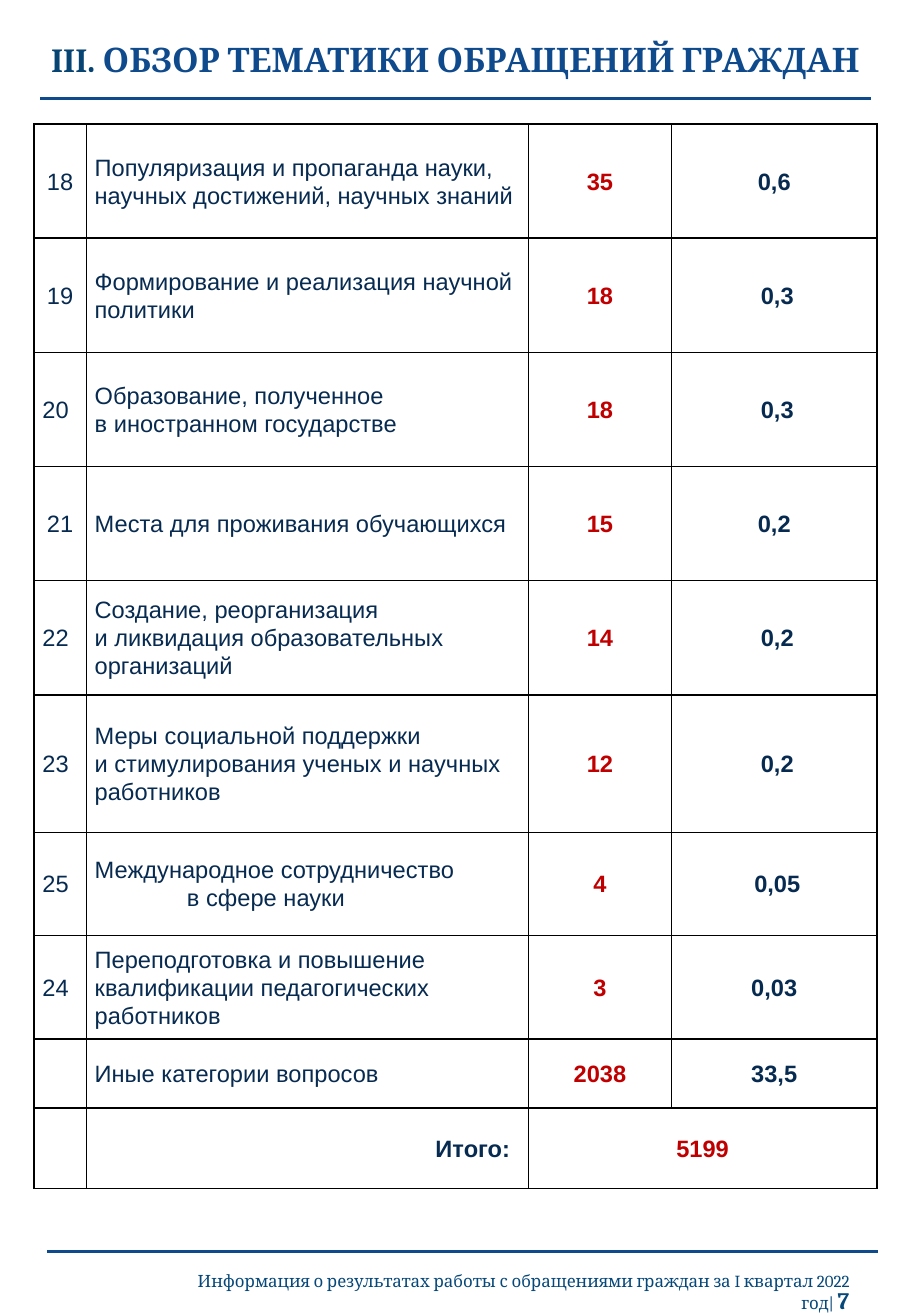
from lxml import etree
from pptx import Presentation
from pptx import util as u
from pptx.dml.color import RGBColor
from pptx.enum import shapes, text
from pptx.oxml import ns

Inches, Pt = u.Inches, u.Pt
LEFT, CENTER, RIGHT = text.PP_ALIGN.LEFT, text.PP_ALIGN.CENTER, text.PP_ALIGN.RIGHT
COLORS = {"title": "0E4A8C", "numeral": "064473", "footer": "064879",
          "body": "072A50", "count": "C00000", "border": "000000"}


def style(font, name, size, color, bold=False):
    font.name, font.size, font.bold = name, Pt(size), bold
    font.color.rgb = RGBColor.from_string(COLORS[color])


def fill_cell(cell, words, align, color="body", bold=False):
    cell.text_frame.text = words
    for para in cell.text_frame.paragraphs:
        para.alignment, para.line_spacing = align, 1.06
        style(para.font, "Arial", 14, color, bold)


deck = Presentation()
deck.slide_width, deck.slide_height = Inches(7.5), Inches(10.83)
page = deck.slides.add_slide(deck.slide_layouts[6])

# Title
box = page.shapes.add_textbox(Inches(0), Inches(0.18), Inches(7.5), Inches(0.66))
box.text_frame.word_wrap = True
box.text_frame.vertical_anchor = text.MSO_ANCHOR.MIDDLE
para = box.text_frame.paragraphs[0]
para.alignment, para.line_spacing = CENTER, 0.9
for words, color in (("III. ", "numeral"), ("ОБЗОР ТЕМАТИКИ ОБРАЩЕНИЙ ГРАЖДАН", "title")):
    span = para.add_run()
    span.text = words
    style(span.font, "Cambria", 20, color, True)

# Rules under the title and above the footer
for left, top in ((0.33, 0.81), (0.39, 10.3)):
    rule = page.shapes.add_connector(shapes.MSO_CONNECTOR.STRAIGHT, Inches(left), Inches(top),
                                     Inches(left + 6.84), Inches(top))
    rule.line.color.rgb = RGBColor.from_string(COLORS["title"])
    rule.line.width = Pt(1.5)
    etree.SubElement(rule._element.spPr, ns.qn("a:effectLst"))

# Footer with page number
box = page.shapes.add_textbox(Inches(1.4), Inches(10.44), Inches(5.69), Inches(0.29))
box.text_frame.word_wrap = True
para = box.text_frame.paragraphs[0]
para.alignment, para.line_spacing = RIGHT, 0.8
footer = "Информация о результатах работы с обращениями граждан за I квартал 2022 год| "
for words, size, bold in ((footer, 10, False), ("7", 14, True)):
    span = para.add_run()
    span.text = words
    style(span.font, "Cambria", size, "footer", bold)

# Table: number, topic, count, share
topics = [
    ("18", "Популяризация и пропаганда науки, научных достижений, научных знаний", "35", "0,6"),
    ("19", "Формирование и реализация научной политики", "18", "0,3"),
    ("20", "Образование, полученное \vв иностранном государстве", "18", "0,3"),
    ("21", "Места для проживания обучающихся", "15", "0,2"),
    ("22", "Создание, реорганизация \vи ликвидация образовательных организаций", "14", "0,2"),
    ("23", "Меры социальной поддержки \vи стимулирования ученых и научных работников", "12", "0,2"),
    ("25", "Международное сотрудничество\nв сфере науки", "4", "0,05"),
    ("24", "Переподготовка и повышение квалификации педагогических работников", "3", "0,03"),
    ("", "Иные категории вопросов", "2038", "33,5"),
]
column_widths = (0.43, 3.64, 1.18, 1.69)
row_heights = (0.94,) * 5 + (1.13, 0.85, 0.85, 0.57, 0.66)
centered_numbers = ("18", "19", "21")
shifted_shares = ("19", "20", "22", "23", "25")

table = page.shapes.add_table(len(row_heights), len(column_widths), Inches(0.28), Inches(1.02),
                              Inches(sum(column_widths)), Inches(sum(row_heights))).table
table.first_row = table.horz_banding = False
for column, width in zip(table.columns, column_widths):
    column.width = Inches(width)
for row, height in zip(table.rows, row_heights):
    row.height = Inches(height)

# Cell margins, borders and fill
for cell in table.iter_cells():
    cell.vertical_anchor = text.MSO_ANCHOR.MIDDLE
    cell.margin_left = cell.margin_right = Inches(0.07)
    cell.margin_top = cell.margin_bottom = 0
    for side in ("lnL", "lnR", "lnT", "lnB"):
        line = etree.SubElement(cell._tc.get_or_add_tcPr(), ns.qn("a:" + side), w=str(Pt(1)))
        paint = etree.SubElement(line, ns.qn("a:solidFill"))
        etree.SubElement(paint, ns.qn("a:srgbClr"), val=COLORS["border"])
    cell.fill.background()

# Topic rows
for index, (number, topic, count, share) in enumerate(topics):
    number_cell, topic_cell, count_cell, share_cell = table.rows[index].cells
    if number:
        fill_cell(number_cell, number, CENTER if number in centered_numbers else LEFT)
    fill_cell(topic_cell, topic, LEFT)
    fill_cell(count_cell, count, CENTER, "count", True)
    fill_cell(share_cell, share, CENTER, bold=True)
    if number in shifted_shares:
        share_cell.margin_left = Inches(0.12)
    for para in topic_cell.text_frame.paragraphs[1:]:
        para._p.get_or_add_pPr().set("marL", str(Inches(0.76)))

# Total row
total_row = len(topics)
table.cell(total_row, 2).merge(table.cell(total_row, 3))
fill_cell(table.cell(total_row, 1), "Итого:", RIGHT, bold=True)
table.cell(total_row, 1).margin_right = Inches(0.15)
fill_cell(table.cell(total_row, 2), "5199", CENTER, "count", True)

deck.save("out.pptx")
